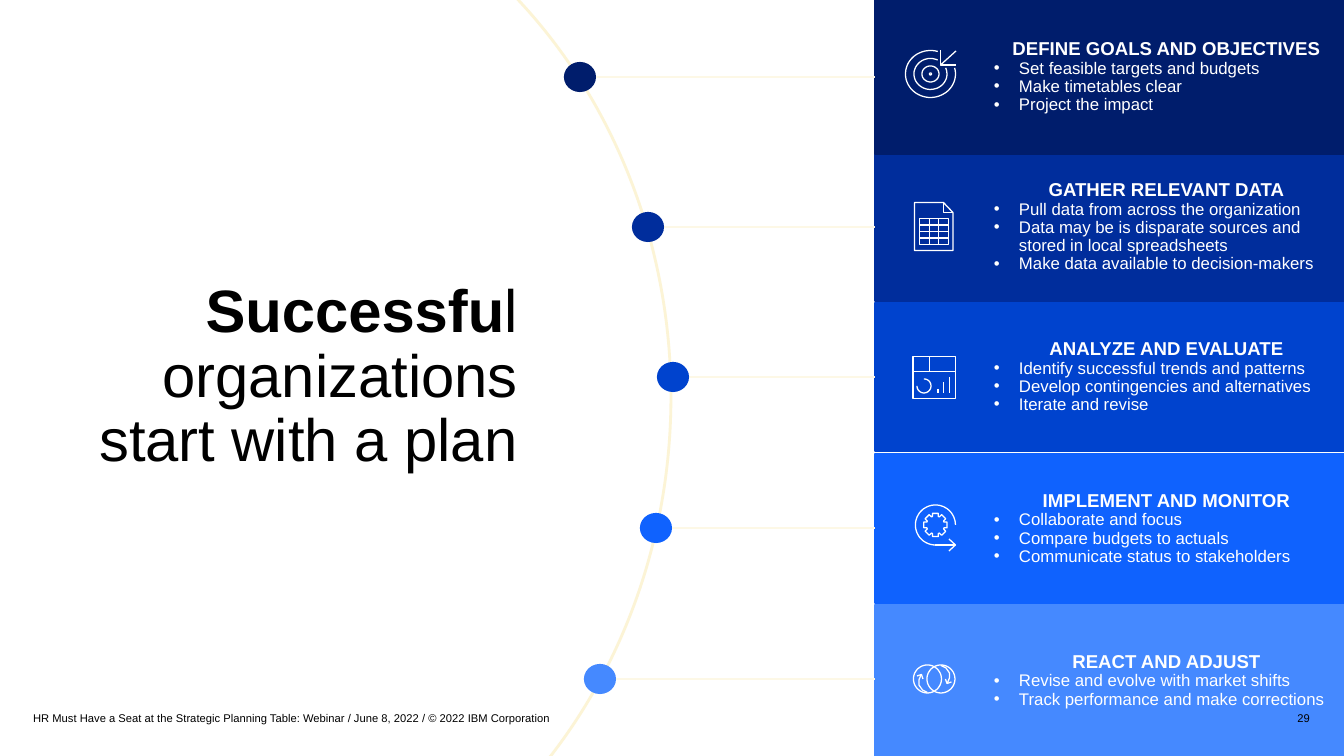
import math
from dataclasses import dataclass

from lxml import etree
from pptx import Presentation
from pptx import util as u
from pptx.dml.color import RGBColor
from pptx.enum import shapes, text
from pptx.oxml.ns import qn

PX = 914400 / 100.8
FINE = 10  # outline points are kept to a tenth of a px
PANEL_LEFT, PANEL_WIDTH = 875, 469
DOT_WIDTH, DOT_HEIGHT = 30, 28
WHITE, BLACK, CREAM, PALE_CREAM = "FFFFFF", "000000", "FCF4D6", "FDF8E6"

Point = tuple[float, float]
Stroke = list[Point]


@dataclass
class Step:
    heading: str
    bullets: list[str]
    colour: str
    top: int
    height: int
    dot_left: int
    dot_top: int
    icon: list[Stroke]


def px(length: float) -> u.Emu:
    return u.Emu(round(length * PX))


def colour(hex_code: str) -> RGBColor:
    return RGBColor.from_string(hex_code)


# Icon outlines
def arc(cx: float, cy: float, rx: float, ry: float, start: int = 0, end: int = 360) -> Stroke:
    count = max(8, (end - start) // 6)
    angles = [math.radians(start + (end - start) * i / count) for i in range(count + 1)]
    return [(cx + rx * math.cos(a), cy + ry * math.sin(a)) for a in angles]


def box(left: float, top: float, right: float, bottom: float) -> Stroke:
    return [(left, top), (right, top), (right, bottom), (left, bottom), (left, top)]


def target_icon() -> list[Stroke]:
    cx, cy = 930.5, 74
    return [arc(cx, cy, 25, 23.5, -15, 287), arc(cx, cy, 16.5, 15.5, -23, 296),
            arc(cx, cy, 8.5, 8), arc(cx, cy, 1, 1),
            [(940.5, 50.5), (940.5, 65), (956, 65)], [(956, 51), (940.5, 65)]]


def spreadsheet_icon() -> list[Stroke]:
    left, top, right, bottom = 919.5, 218.5, 948.5, 244.5
    columns = [left + (right - left) * i / 3 for i in (1, 2)]
    rows = [top + (bottom - top) * i / 4 for i in (1, 2, 3)]
    page = [(914.5, 202.5), (943.5, 202.5), (953, 212.5), (953, 250.5), (914.5, 250.5), (914.5, 202.5)]
    return [page, [(943.5, 202.5), (943.5, 212.5), (953, 212.5)], box(left, top, right, bottom),
            *[[(x, top), (x, bottom)] for x in columns],
            *[[(left, y), (right, y)] for y in rows]]


def dashboard_icon() -> list[Stroke]:
    bars = [(938, 389), (943.5, 382), (949.5, 377)]
    return [box(913, 356.5, 955.5, 398.5), [(913, 371.5), (955.5, 371.5)],
            [(929.5, 356.5), (929.5, 371.5)], arc(924, 386, 7, 7, -90, 180),
            *[[(x, y), (x, 393)] for x, y in bars]]


def gear_icon() -> list[Stroke]:
    cx, cy = 935.5, 525
    tooth = [(-19, 9), (-14, 12), (14, 12), (19, 9)]
    gear = [(cx + r * math.cos(math.radians(45 * k + a)), cy + r * math.sin(math.radians(45 * k + a)))
            for k in range(8) for a, r in tooth]
    return [arc(cx, cy, 20, 20, 90, 360), gear + gear[:1],
            [(cx, 545), (955.5, 545)], [(949, 539), (955.5, 545), (949, 551)]]


def loops_icon() -> list[Stroke]:
    left_x, right_x, cy = 927.5, 941, 679
    arrow = [[(927.5, 692.5), (922.5, 690), (919, 685), (919, 680), (921, 675)],
             [(917, 676), (921.5, 674.5), (923, 679)]]
    turned = [[(left_x + right_x - x, 2 * cy - y) for x, y in stroke] for stroke in arrow]
    return [arc(left_x, cy, 14, 14), arc(right_x, cy, 14, 14), *arrow, *turned]


STEPS = [
    Step("DEFINE GOALS AND OBJECTIVES",
         ["Set feasible targets and budgets", "Make timetables clear", "Project the impact"],
         "001D6C", 0, 154, 565, 63, target_icon()),
    Step("GATHER RELEVANT DATA",
         ["Pull data from across the organization",
          "Data may be is disparate sources and stored in local spreadsheets",
          "Make data available to decision-makers"],
         "002D9C", 153, 148, 633, 213, spreadsheet_icon()),
    Step("ANALYZE AND EVALUATE",
         ["Identify successful trends and patterns", "Develop contingencies and alternatives",
          "Iterate and revise"],
         "0043CE", 303, 148, 658, 363, dashboard_icon()),
    Step("IMPLEMENT AND MONITOR",
         ["Collaborate and focus", "Compare budgets to actuals", "Communicate status to stakeholders"],
         "0F62FE", 454, 149, 641, 514, gear_icon()),
    Step("REACT AND ADJUST",
         ["Revise and evolve with market shifts", "Track performance and make corrections"],
         "4589FF", 605, 151, 585, 665, loops_icon()),
]


# Drawing functions
def add_shape(slide, kind, left: int, top: int, width: int, height: int,
              fill: str | None, line: str, weight: float = 1.5):
    shape = slide.shapes.add_shape(kind, px(left), px(top), px(width), px(height))
    shape.shadow.inherit = False
    if fill:
        shape.fill.solid()
        shape.fill.fore_color.rgb = colour(fill)
    else:
        shape.fill.background()
    shape.line.color.rgb = colour(line)
    shape.line.width = u.Pt(weight)
    return shape


def set_frame(frame, left: int = 0, other: int = 0) -> None:
    frame.word_wrap = True
    frame.auto_size = text.MSO_AUTO_SIZE.NONE
    frame.vertical_anchor = text.MSO_ANCHOR.MIDDLE
    frame.margin_left = px(left)
    frame.margin_top = frame.margin_right = frame.margin_bottom = px(other)


def style(paragraph, size: float, hex_code: str, align, bold: bool | None = False) -> None:
    paragraph.alignment = align
    font = paragraph.font
    font.name, font.size, font.bold = "Arial", u.Pt(size), bold
    font.color.rgb = colour(hex_code)


def add_bullet(paragraph) -> None:
    properties = paragraph._p.get_or_add_pPr()
    properties.set("marL", str(px(25)))
    properties.set("indent", str(px(-25)))
    etree.SubElement(properties, qn("a:buFont")).set("typeface", "Arial")
    etree.SubElement(properties, qn("a:buChar")).set("char", "•")


def add_panel(slide, step: Step) -> None:
    panel = add_shape(slide, shapes.MSO_SHAPE.RECTANGLE, PANEL_LEFT, step.top,
                      PANEL_WIDTH, step.height, step.colour, step.colour)
    frame = panel.text_frame
    set_frame(frame, 119, 5)
    heading = frame.paragraphs[0]
    heading.text = step.heading
    heading.line_spacing = 0.9
    style(heading, 13.3, WHITE, text.PP_ALIGN.CENTER, True)
    for words in step.bullets:
        bullet = frame.add_paragraph()
        bullet.text = words
        bullet.line_spacing = 0.9
        add_bullet(bullet)
        style(bullet, 12, WHITE, text.PP_ALIGN.LEFT)


def add_link(slide, step: Step) -> None:
    y = px(step.dot_top + DOT_HEIGHT // 2)
    link = slide.shapes.add_connector(shapes.MSO_CONNECTOR.STRAIGHT,
                                      px(step.dot_left + DOT_WIDTH), y, px(PANEL_LEFT), y)
    link.line.color.rgb = colour(PALE_CREAM)
    link.line.width = u.Pt(1.5)
    etree.SubElement(link._element.spPr, qn("a:effectLst"))


def add_icon(slide, strokes: list[Stroke]) -> None:
    fine = [[(x * FINE, y * FINE) for x, y in stroke] for stroke in strokes]
    builder = slide.shapes.build_freeform(*fine[0][0], scale=PX / FINE)
    for i, stroke in enumerate(fine):
        if i:
            builder.move_to(*stroke[0])
        builder.add_line_segments(stroke[1:], close=False)
    icon = builder.convert_to_shape()
    icon.shadow.inherit = False
    icon.fill.background()
    icon.line.color.rgb = colour(WHITE)
    icon.line.width = u.Pt(0.9)


def add_footer(slide, words: str, left: int, width: int, align) -> None:
    footer = slide.shapes.add_textbox(px(left), px(706), px(width), px(24))
    set_frame(footer.text_frame)
    paragraph = footer.text_frame.paragraphs[0]
    paragraph.text = words
    style(paragraph, 8, BLACK, align)


def add_title(slide) -> None:
    title = slide.shapes.title
    title.left, title.top, title.width, title.height = px(31), px(77), px(487), px(602)
    set_frame(title.text_frame)
    paragraph = title.text_frame.paragraphs[0]
    paragraph.line_spacing = 0.9
    for words, bold in [("Successfu", True), ("l organizations start with a plan", False)]:
        run = paragraph.add_run()
        run.text, run.font.bold = words, bold
    style(paragraph, 42.7, BLACK, text.PP_ALIGN.RIGHT, None)


def main() -> None:
    deck = Presentation()
    deck.slide_width, deck.slide_height = px(1344), px(756)
    slide = deck.slides.add_slide(deck.slide_layouts[5])
    add_title(slide)
    # Panels, links and the curve they hang from
    for step in reversed(STEPS):
        add_panel(slide, step)
    for step in STEPS:
        add_link(slide, step)
    add_shape(slide, shapes.MSO_SHAPE.OVAL, -334, -156, 1005, 1106, None, CREAM, 2)
    # Dots and icons
    for step in STEPS:
        add_shape(slide, shapes.MSO_SHAPE.OVAL, step.dot_left, step.dot_top,
                  DOT_WIDTH, DOT_HEIGHT, step.colour, step.colour)
        add_icon(slide, step.icon)
    # Footer
    add_footer(slide, "HR Must Have a Seat at the Strategic Planning Table: Webinar / "
               "June 8, 2022 / © 2022 IBM Corporation", 33, 605, text.PP_ALIGN.LEFT)
    add_footer(slide, "29", 1041, 269, text.PP_ALIGN.RIGHT)
    deck.save("out.pptx")


if __name__ == "__main__":
    main()
